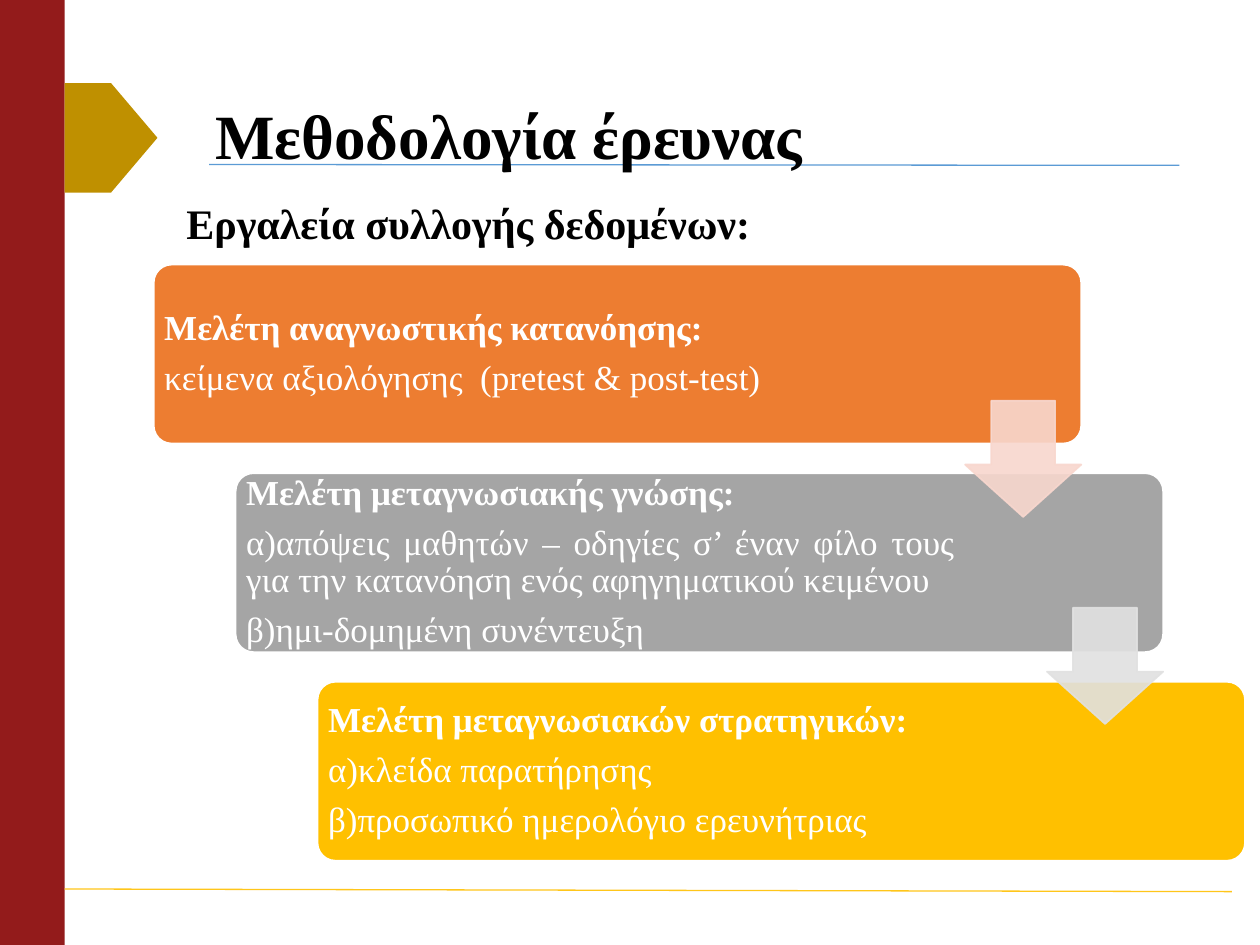
from lxml import etree
from pptx import Presentation
from pptx import util as u
from pptx.dml.color import RGBColor
from pptx.enum import shapes, text
from pptx.oxml.ns import qn

FONT = "Times New Roman"
BLACK = RGBColor(0x00, 0x00, 0x00)
WHITE = RGBColor(0xFF, 0xFF, 0xFF)
CRIMSON = RGBColor(0x93, 0x1B, 0x1B)
OCHRE = RGBColor(0xBF, 0x90, 0x00)
BLUE = RGBColor(0x5B, 0x9B, 0xD5)
YELLOW = RGBColor(0xFF, 0xC6, 0x1A)
ORANGE = RGBColor(0xED, 0x7D, 0x31)
GREY = RGBColor(0xA5, 0xA5, 0xA5)
GOLD = RGBColor(0xFF, 0xC0, 0x00)
PALE_PINK = RGBColor(0xF8, 0xD7, 0xCE)
PALE_GREY = RGBColor(0xE1, 0xE1, 0xE1)

STEP_X = 46.8
STEPS = [
    (ORANGE, 426, ["Μελέτη αναγνωστικής κατανόησης:",
                   "κείμενα αξιολόγησης  (pretest & post-test)"]),
    (GREY, 417, ["Μελέτη μεταγνωσιακής γνώσης:",
                 "α)απόψεις μαθητών – οδηγίες σ’ έναν φίλο τους "
                 "για την κατανόηση ενός αφηγηματικού κειμένου",
                 "β)ημι-δομημένη συνέντευξη"]),
    (GOLD, 417, ["Μελέτη μεταγνωσιακών στρατηγικών:",
                 "α)κλείδα παρατήρησης",
                 "β)προσωπικό ημερολόγιο ερευνήτριας"]),
]


def points(*lengths):
    """Convert plain numbers to point lengths."""
    return [u.Pt(length) for length in lengths]


def add_block(slide, kind, box, fill, outline=None, adjustments=()):
    """Add a filled preset shape, outlined only when a colour is given."""
    block = slide.shapes.add_shape(kind, *points(*box))
    block.shadow.inherit = False
    block.fill.solid()
    block.fill.fore_color.rgb = fill
    if outline is None:
        block.line.fill.background()
    else:
        block.line.color.rgb = outline
        block.line.width = u.Pt(1)
    for index, value in enumerate(adjustments):
        block.adjustments[index] = value
    return block


def add_rule(slide, start, end, color):
    """Add a thin straight line."""
    rule = slide.shapes.add_connector(
        shapes.MSO_CONNECTOR.STRAIGHT, *points(*start, *end))
    rule.line.color.rgb = color
    rule.line.width = u.Pt(0.75)
    etree.SubElement(rule._element.spPr, qn("a:effectLst"))


def add_text_frame(slide, box, anchor):
    """Add an empty wrapping text box and return its frame."""
    frame = slide.shapes.add_textbox(*points(*box)).text_frame
    frame.word_wrap = True
    frame.vertical_anchor = anchor
    return frame


def add_run(paragraph, wording, size, color, bold):
    """Append one styled run to a paragraph."""
    run = paragraph.add_run()
    run.text = wording
    run.font.name = FONT
    run.font.size = u.Pt(size)
    run.font.bold = bold
    run.font.color.rgb = color


def add_heading(slide, box, wording, size, anchor, spacing):
    """Add a bold black heading."""
    heading = add_text_frame(slide, box, anchor).paragraphs[0]
    heading.line_spacing = spacing
    add_run(heading, wording, size, BLACK, True)


def add_step(slide, index, color, text_width, wordings):
    """Add one stair of the process with its bold first line."""
    left, top, height = 87.84 + index * STEP_X, 151.2 + index * 119.2, 102.24
    add_block(slide, shapes.MSO_SHAPE.ROUNDED_RECTANGLE,
              (left, top, 530, height), color, WHITE, [0.1])
    frame = add_text_frame(slide, (left, top, text_width, height),
                           text.MSO_ANCHOR.MIDDLE)
    frame.margin_left = frame.margin_right = u.Pt(6)
    frame.margin_top = frame.margin_bottom = u.Pt(6)
    for number, wording in enumerate(wordings):
        paragraph = frame.add_paragraph() if number else frame.paragraphs[0]
        paragraph.alignment = text.PP_ALIGN.JUSTIFY
        paragraph.line_spacing = 0.9
        paragraph.space_after = u.Pt(7)
        add_run(paragraph, wording, 20, WHITE, number == 0)


def add_step_arrow(slide, index, color):
    """Add a slightly transparent arrow leading to the next stair."""
    box = (551.5 + index * STEP_X, 229 + index * 118.3, 66.4, 66.4)
    arrow = add_block(slide, shapes.MSO_SHAPE.DOWN_ARROW, box, color, color,
                      [0.55, 0.45])
    for tint in arrow._element.spPr.iter(qn("a:srgbClr")):
        etree.SubElement(tint, qn("a:alpha"), val="90000")


def main():
    """Build the slide and save it."""
    deck = Presentation()
    deck.slide_width, deck.slide_height = points(720, 540)
    slide = deck.slides.add_slide(deck.slide_layouts[6])

    add_block(slide, shapes.MSO_SHAPE.RECTANGLE, (0, 0, 37, 540), CRIMSON)
    add_rule(slide, (119.5, 94), (674, 94.5), BLUE)
    add_rule(slide, (37, 508), (704, 509.5), YELLOW)
    add_block(slide, shapes.MSO_SHAPE.PENTAGON, (37, 47.5, 53, 62.5), OCHRE)

    add_heading(slide, (116, 49, 566.6, 60.5), "Μεθοδολογία έρευνας", 36,
                text.MSO_ANCHOR.MIDDLE, 0.9)
    add_heading(slide, (99.4, 109.4, 601, 36), "Εργαλεία συλλογής δεδομένων:",
                24, text.MSO_ANCHOR.TOP, 1.0)

    for index, step in enumerate(STEPS):
        add_step(slide, index, *step)
    for index, color in enumerate((PALE_PINK, PALE_GREY)):
        add_step_arrow(slide, index, color)

    deck.save("out.pptx")


if __name__ == "__main__":
    main()
